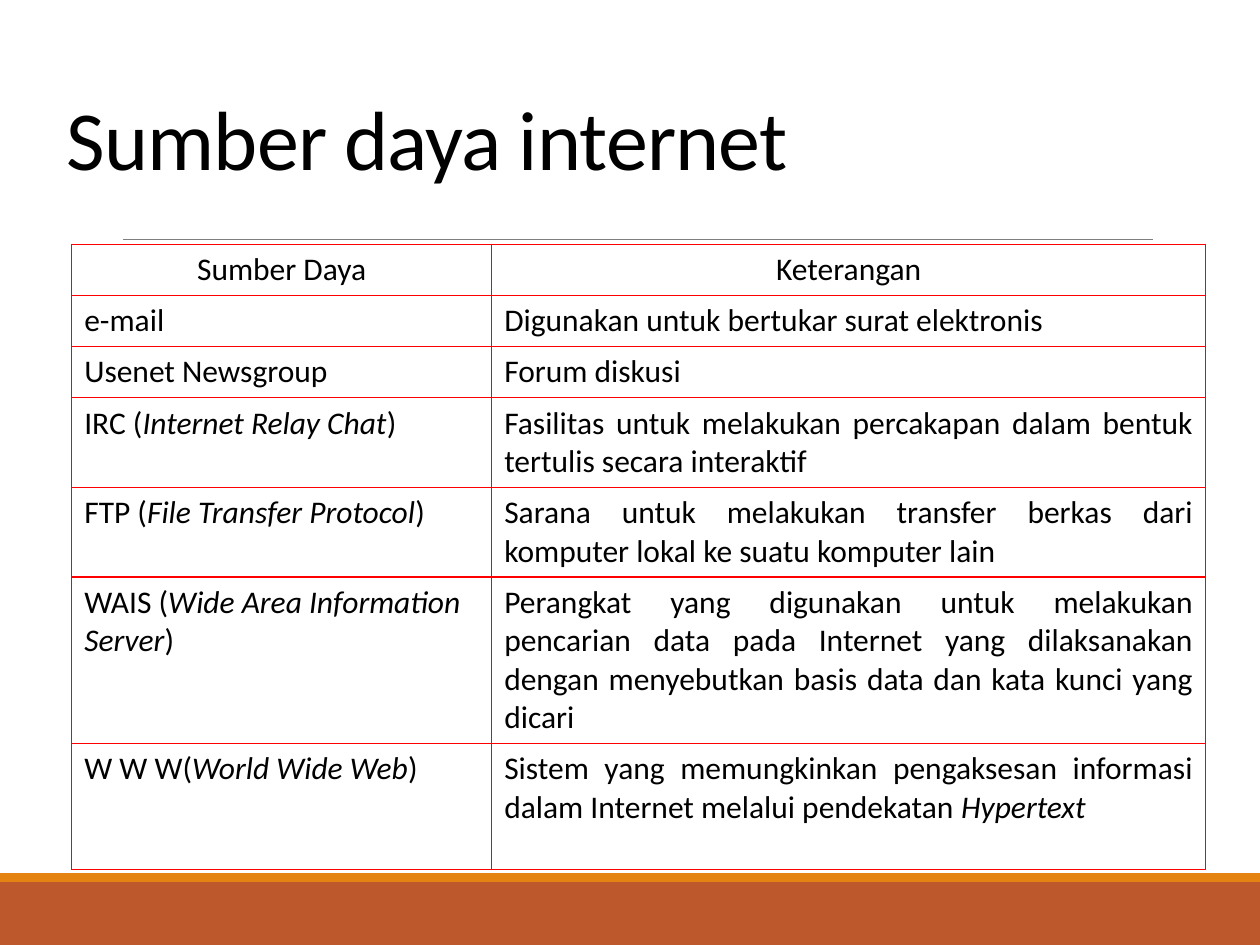
from dataclasses import dataclass

from lxml import etree
from pptx import Presentation
from pptx.dml.color import RGBColor
from pptx.enum import shapes, text
from pptx.oxml.ns import qn
from pptx.util import Pt


@dataclass(frozen=True)
class Theme:
    font: str = "Calibri"
    title_size: int = 48
    body_size: int = 18
    ink: str = "000000"
    rule: str = "7F7F7F"
    border: str = "FF0000"
    footer: str = "BD582C"
    accent: str = "E48312"


LEFT, CENTER, JUSTIFY = text.PP_ALIGN.LEFT, text.PP_ALIGN.CENTER, text.PP_ALIGN.JUSTIFY
COLUMNS = [240, 408]
HEADER = ("Sumber Daya", "Keterangan")
# Row height, resource, description, description alignment; *...* is italic
RESOURCES = [
    (29, "e-mail", "Digunakan untuk bertukar surat elektronis", LEFT),
    (29, "Usenet Newsgroup", "Forum diskusi", LEFT),
    (51, "IRC (*Internet Relay Chat*)",
     "Fasilitas untuk melakukan percakapan dalam bentuk tertulis secara interaktif", JUSTIFY),
    (51, "FTP (*File Transfer Protocol*)",
     "Sarana untuk melakukan transfer berkas dari komputer lokal ke suatu komputer lain", JUSTIFY),
    (95, "WAIS (*Wide Area Information Server*)",
     "Perangkat yang digunakan untuk melakukan pencarian data pada Internet yang "
     "dilaksanakan dengan menyebutkan basis data dan kata kunci yang dicari", JUSTIFY),
    (72, "W W W(*World Wide Web*)",
     "Sistem yang memungkinkan pengaksesan informasi dalam Internet melalui "
     "pendekatan *Hypertext*", JUSTIFY),
]


def write(tf, content, *, theme, size, align=LEFT, line_spacing=None, tracking=None):
    """Fill a text frame with one paragraph; parts between asterisks are italic."""
    p = tf.paragraphs[0]
    p.alignment = align
    p.line_spacing = line_spacing
    for i, part in enumerate(content.split("*")):
        if not part:
            continue
        r = p.add_run()
        r.text = part
        r.font.name = theme.font
        r.font.size = Pt(size)
        r.font.italic = i % 2 == 1
        r.font.color.rgb = RGBColor.from_string(theme.ink)
        if tracking is not None:
            r.font._element.set("spc", str(int(tracking * 100)))


class SlideBuilder:
    def __init__(self, s, theme):
        self.s, self.theme = s, theme

    def bar(self, x, y, w, h, color):
        sp = self.s.shapes.add_shape(shapes.MSO_SHAPE.RECTANGLE, Pt(x), Pt(y), Pt(w), Pt(h))
        sp.shadow.inherit = False
        sp.fill.solid()
        sp.fill.fore_color.rgb = RGBColor.from_string(color)
        sp.line.fill.background()

    def rule(self, x1, x2, y):
        line = self.s.shapes.add_connector(
            shapes.MSO_CONNECTOR.STRAIGHT, Pt(x1), Pt(y), Pt(x2), Pt(y))
        line.line.color.rgb = RGBColor.from_string(self.theme.rule)
        line.line.width = Pt(0.5)
        etree.SubElement(line._element.spPr, qn("a:effectLst"))

    def title(self, content, x, y, w, h):
        sp = self.s.shapes.title
        sp.left, sp.top, sp.width, sp.height = Pt(x), Pt(y), Pt(w), Pt(h)
        tf = sp.text_frame
        tf.word_wrap = True
        tf.auto_size = text.MSO_AUTO_SIZE.NONE
        tf.vertical_anchor = text.MSO_ANCHOR.BOTTOM
        write(tf, content, theme=self.theme, size=self.theme.title_size,
              line_spacing=0.85, tracking=-0.5)

    def table(self, x, y, widths, rows):
        """Draw rows of (height, [(content, alignment), ...])."""
        tbl = self.s.shapes.add_table(
            len(rows), len(widths), Pt(x), Pt(y),
            Pt(sum(widths)), Pt(sum(height for height, _ in rows))).table
        tbl.first_row = tbl.horz_banding = False
        for column, width in zip(tbl.columns, widths):
            column.width = Pt(width)
        for row, (height, cells) in zip(tbl.rows, rows):
            row.height = Pt(height)
            for cell, (content, align) in zip(row.cells, cells):
                self.border(cell)
                cell.fill.background()
                write(cell.text_frame, content, theme=self.theme,
                      size=self.theme.body_size, align=align)

    def border(self, cell):
        tc_pr = cell._tc.get_or_add_tcPr()
        for side in ("lnL", "lnR", "lnT", "lnB"):
            ln = etree.SubElement(tc_pr, qn(f"a:{side}"), w=str(Pt(1)))
            fill = etree.SubElement(ln, qn("a:solidFill"))
            etree.SubElement(fill, qn("a:srgbClr"), val=self.theme.border)


def main():
    prs = Presentation()
    prs.slide_width, prs.slide_height = Pt(720), Pt(540)
    theme = Theme()
    slide = SlideBuilder(prs.slides.add_slide(prs.slide_layouts[5]), theme)
    slide.bar(0, 504, 720, 36, theme.footer)
    slide.bar(0, 499, 720, 5, theme.accent)
    slide.rule(70.5, 659, 136.8)
    slide.title("Sumber daya internet", 31, 49, 648, 62)
    rows = [(29, [(label, CENTER) for label in HEADER])]
    rows += [(height, [(name, LEFT), (description, align)])
             for height, name, description, align in RESOURCES]
    slide.table(41, 139.7, COLUMNS, rows)
    prs.save("out.pptx")


if __name__ == "__main__":
    main()
